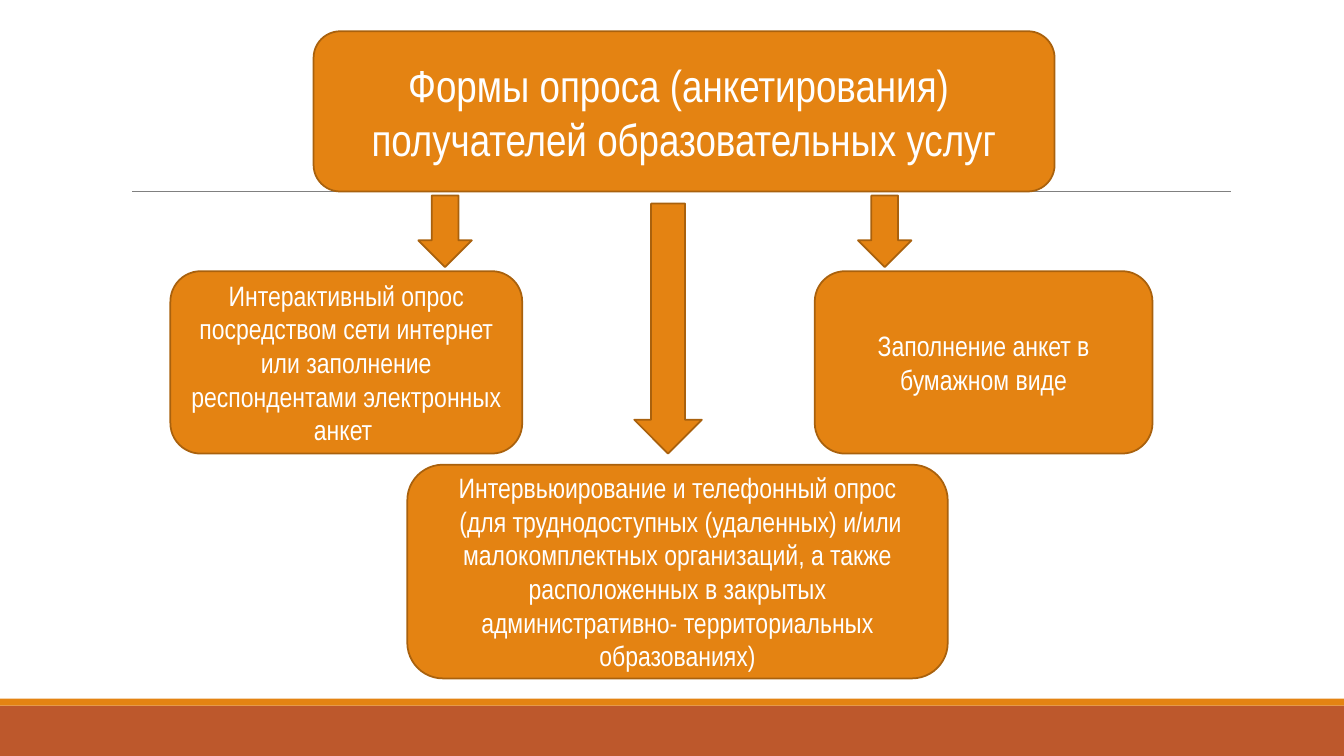
"""Build a slide showing the survey forms offered to recipients of educational services."""
import pptx
import pptx.dml.color
import pptx.enum.shapes
import pptx.enum.text
import pptx.oxml
import pptx.oxml.ns
import pptx.util

ORANGE, RUST, OUTLINE, GRAY, WHITE = "E48312", "BD582C", "A9610D", "808080", "FFFFFF"
SHAPES = pptx.enum.shapes.MSO_SHAPE

presentation = pptx.Presentation()
presentation.slide_width = pptx.util.Inches(13.33)
presentation.slide_height = pptx.util.Inches(7.5)
column = presentation.slide_width / 100
row = presentation.slide_height / 100
slide = presentation.slides.add_slide(presentation.slide_layouts[6])


def paint(color_format, color):
    color_format.rgb = pptx.dml.color.RGBColor.from_string(color)


def add_figure(text, kind, left, top, width, height, fill=ORANGE, line=OUTLINE, size=20):
    shape = slide.shapes.add_shape(
        kind, round(left * column), round(top * row), round(width * column), round(height * row))
    shape.shadow.inherit = False
    shape.fill.solid()
    paint(shape.fill.fore_color, fill)
    if line:
        paint(shape.line.color, line)
        shape.line.width = pptx.util.Pt(1.25)
    else:
        shape.line.fill.background()
    if text:
        frame = shape.text_frame
        frame.word_wrap = True
        frame.vertical_anchor = pptx.enum.text.MSO_ANCHOR.MIDDLE
        frame.text = text
        for paragraph in frame.paragraphs:
            paragraph.alignment = pptx.enum.text.PP_ALIGN.CENTER
            font = paragraph.runs[0].font
            font.name = "Arial Narrow"
            font.size = pptx.util.Pt(size)
            paint(font.color, WHITE)


add_figure("", SHAPES.RECTANGLE, 0, 93.33, 100, 6.67, fill=RUST, line=None)
add_figure("", SHAPES.RECTANGLE, 0, 92.4, 100, 0.93, line=None)

rule = slide.shapes.add_connector(
    pptx.enum.shapes.MSO_CONNECTOR.STRAIGHT,
    round(9.83 * column), round(25.33 * row), round(91.6 * column), round(25.33 * row))
paint(rule.line.color, GRAY)
rule.line.width = pptx.util.Pt(0.5)
rule._element.spPr.append(pptx.oxml.parse_xml(f'<a:effectLst {pptx.oxml.ns.nsdecls("a")}/>'))

add_figure("Формы опроса (анкетирования) \nполучателей образовательных услуг",
           SHAPES.ROUNDED_RECTANGLE, 23.33, 4.13, 55.14, 21.2, size=32)

survey_forms = [
    ("Интерактивный опрос посредством сети интернет или заполнение "
     "респондентами электронных анкет ", 12.68, 35.87, 26.18, 24.13),
    ("Заполнение анкет в бумажном виде", 60.62, 35.87, 25.13, 24.13),
    ("Интервьюирование и телефонный опрос\n"
     " (для труднодоступных (удаленных) и/или малокомплектных организаций, "
     "а также расположенных в закрытых административно- территориальных "
     "образованиях)", 30.31, 61.47, 40.21, 28.27),
]
for text, *box in survey_forms:
    add_figure(text, SHAPES.ROUNDED_RECTANGLE, *box)

arrows = [(31.13, 25.87, 3.98, 9.47), (47.19, 26.93, 5.03, 33.07), (63.84, 25.87, 3.98, 9.47)]
for box in arrows:
    add_figure("", SHAPES.DOWN_ARROW, *box)

presentation.save("out.pptx")
